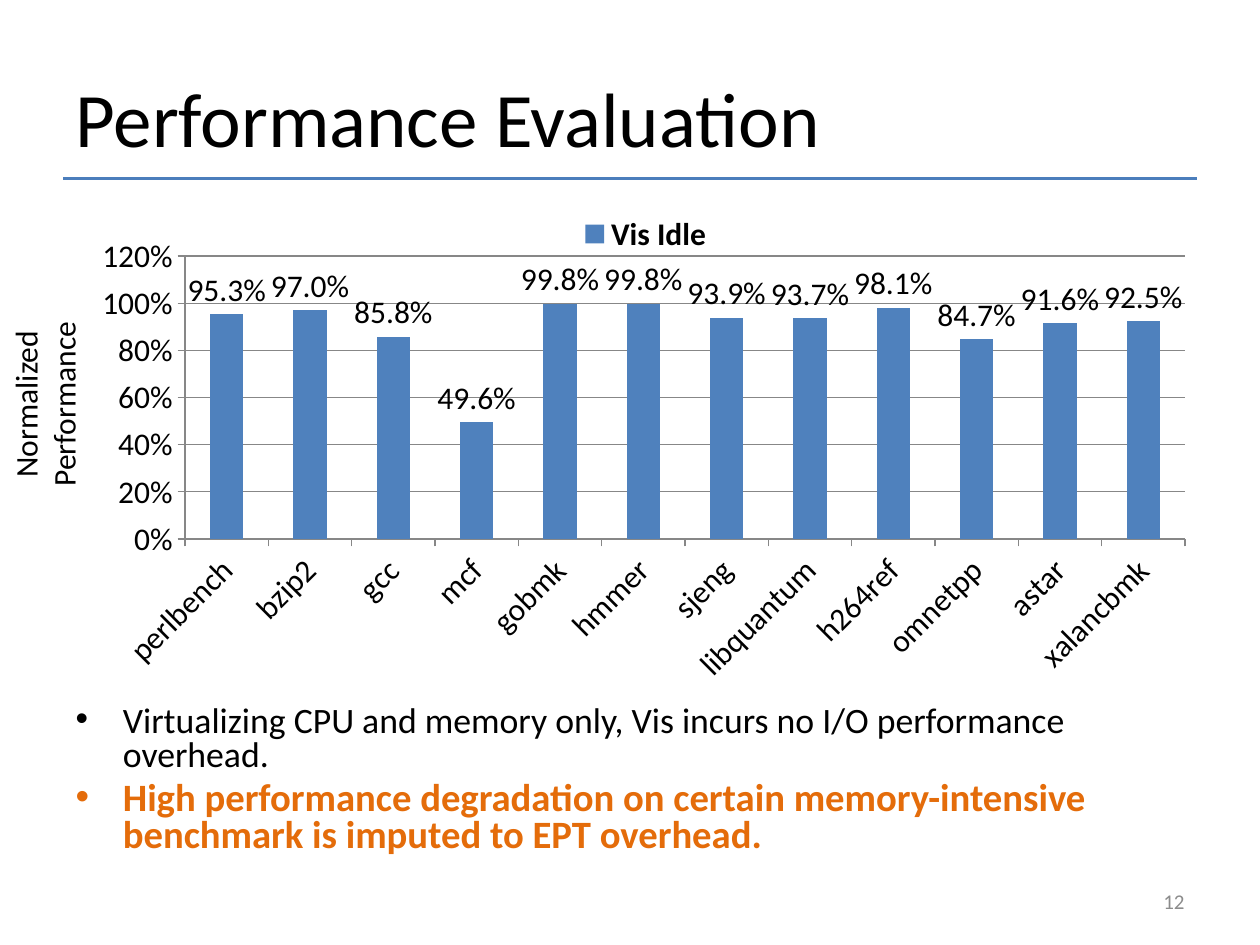
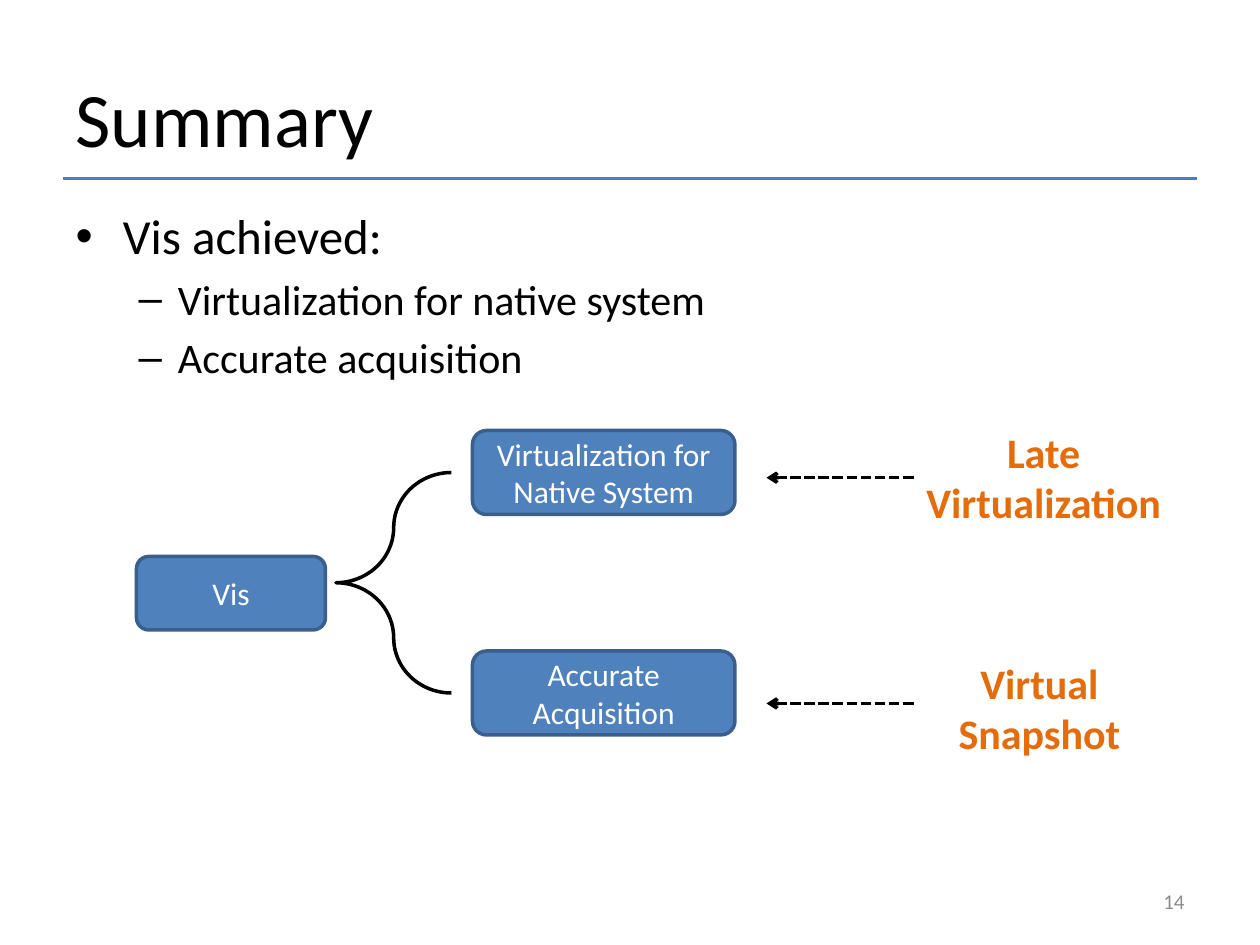
from lxml.etree import SubElement
from pptx import Presentation
from pptx.chart.data import CategoryChartData
from pptx.dml.color import RGBColor
from pptx.enum.chart import XL_CHART_TYPE as ChartType
from pptx.enum.chart import XL_LABEL_POSITION as LabelPos
from pptx.enum.chart import XL_LEGEND_POSITION as LegendPos
from pptx.enum.chart import XL_TICK_MARK as Tick
from pptx.enum.dml import MSO_LINE as Dash
from pptx.enum.shapes import MSO_CONNECTOR as Connector
from pptx.enum.shapes import MSO_SHAPE as Shape
from pptx.enum.text import MSO_ANCHOR as Anchor
from pptx.enum.text import MSO_AUTO_SIZE as AutoSize
from pptx.enum.text import PP_ALIGN as Align
from pptx.oxml.ns import qn
from pptx.util import Inches, Pt

COLORS = {"text": "000000", "accent": "E46C0A", "fill": "4F81BD",
          "edge": "3A5F8C", "rule": "4B7EBC", "number": "8C8C8C",
          "grid": "878787", "light": "FFFFFF"}
FONT = "Calibri"
COLUMNS, ROWS = 120, 90


def rgb(name):
    return RGBColor.from_string(COLORS[name])


def apply(target, formats):
    for name, value in formats.items():
        setattr(target, name, value)


def set_font(font, size, color="text", bold=False):
    apply(font, {"name": FONT, "size": Pt(size), "bold": bold})
    font.color.rgb = rgb(color)


def set_line(line, color, width=2):
    line.color.rgb = rgb(color)
    line.width = Pt(width)


class Deck:
    """Holds the shared style and the current slide; lengths are grid cells."""

    def __init__(self):
        self.prs = Presentation()
        apply(self.prs, {"slide_width": Inches(10), "slide_height": Inches(7.5)})
        self.cell_w = self.prs.slide_width / COLUMNS
        self.cell_h = self.prs.slide_height / ROWS
        self.slide = None

    def box(self, left, top, width, height):
        return (round(left * self.cell_w), round(top * self.cell_h),
                round(width * self.cell_w), round(height * self.cell_h))

    def place(self, shape, at):
        apply(shape, dict(zip(("left", "top", "width", "height"), self.box(*at))))

    def new_slide(self, heading, number):
        self.slide = self.prs.slides.add_slide(self.prs.slide_layouts[1])
        self.line((6, 17), (114, 17), "rule")
        title = self.slide.shapes.title
        self.place(title, (6, 3.6, 108, 15))
        self.set_text(title, [heading], 44, align=Align.LEFT, anchor=Anchor.MIDDLE)
        self.label((86, 83.4, 28, 4.8), [number], 12, "number",
                   align=Align.RIGHT, anchor=Anchor.MIDDLE, wrap=True)

    def set_text(self, shape, lines, size, color="text", bold=False,
                 align=Align.CENTER, anchor=Anchor.TOP, wrap=True):
        frame = shape.text_frame
        frame.text = "\n".join(lines)
        apply(frame, {"word_wrap": wrap, "auto_size": AutoSize.NONE,
                      "vertical_anchor": anchor})
        for paragraph in frame.paragraphs:
            paragraph.alignment = align
            set_font(paragraph.font, size, color, bold)

    def label(self, at, lines, size, color="text", bold=False, wrap=False,
              vertical=None, **layout):
        label = self.slide.shapes.add_textbox(*self.box(*at))
        self.set_text(label, lines, size, color, bold, wrap=wrap, **layout)
        if vertical:
            label.text_frame._txBody.bodyPr.set("vert", vertical)

    def bullets(self, at, items, spacing=1.0):
        """Each item is (text, level, font formats)."""
        body = self.slide.placeholders[1]
        self.place(body, at)
        frame = body.text_frame
        frame.text = "\n".join(text for text, _, _ in items)
        frame.auto_size = AutoSize.NONE
        frame.paragraphs[0].space_before = Pt(0)
        for paragraph, (_, level, formats) in zip(frame.paragraphs, items):
            apply(paragraph, {"level": level, "line_spacing": spacing})
            set_font(paragraph.font, **formats)

    def node(self, at, text):
        node = self.slide.shapes.add_shape(Shape.ROUNDED_RECTANGLE, *self.box(*at))
        node.shadow.inherit = False
        node.fill.solid()
        node.fill.fore_color.rgb = rgb("fill")
        set_line(node.line, "edge")
        self.set_text(node, [text], 18, "light", anchor=Anchor.MIDDLE)

    def brace(self, at, curl, middle):
        brace = self.slide.shapes.add_shape(Shape.LEFT_BRACE, *self.box(*at))
        brace.shadow.inherit = False
        brace.fill.background()
        set_line(brace.line, "text")
        brace.adjustments[0], brace.adjustments[1] = curl, middle

    def line(self, start, end, color, arrow=False):
        line = self.slide.shapes.add_connector(
            Connector.STRAIGHT, *self.box(*start, *end))
        set_line(line.line, color)
        properties = line._element.spPr
        if arrow:
            line.line.dash_style = Dash.SQUARE_DOT
            SubElement(properties.find(qn("a:ln")), qn("a:tailEnd"), type="arrow")
        SubElement(properties, qn("a:effectLst"))

    def column_chart(self, at, series_name, values, plot_area):
        data = CategoryChartData(number_format="0.0%")
        data.categories = list(values)
        data.add_series(series_name, list(values.values()))
        chart = self.slide.shapes.add_chart(
            ChartType.COLUMN_CLUSTERED, *self.box(*at), data).chart
        apply(chart, {"has_title": False, "has_legend": True})
        set_font(chart.font, 18)
        apply(chart.legend, {"position": LegendPos.TOP, "include_in_layout": False})
        set_font(chart.legend.font, 18, bold=True)

        # Columns and their labels
        plot = chart.plots[0]
        apply(plot, {"vary_by_categories": False, "gap_width": 150,
                     "has_data_labels": True})
        apply(plot.data_labels, {"show_value": True, "number_format": "0.0%",
                                 "number_format_is_linked": False,
                                 "position": LabelPos.OUTSIDE_END})
        set_font(plot.data_labels.font, 18)
        columns = plot.series[0].format.fill
        columns.solid()
        columns.fore_color.rgb = rgb("fill")

        # Axes
        scale, names = chart.value_axis, chart.category_axis
        apply(scale, {"minimum_scale": 0, "maximum_scale": 1.2, "major_unit": 0.2,
                      "has_major_gridlines": True})
        apply(scale.tick_labels, {"number_format": "0%",
                                  "number_format_is_linked": False})
        set_line(scale.major_gridlines.format.line, "grid", 0.75)
        for axis in (scale, names):
            axis.major_tick_mark = Tick.OUTSIDE
            set_font(axis.tick_labels.font, 18)
            set_line(axis.format.line, "grid", 0.75)
        names._element.find(qn("c:txPr")).find(qn("a:bodyPr")).set("rot", "-2700000")
        self.set_plot_area(chart, plot_area)

    @staticmethod
    def set_plot_area(chart, shares):
        area = chart._chartSpace.chart.plotArea
        for former in area.findall(qn("c:layout")):
            area.remove(former)
        layout = SubElement(area, qn("c:layout"))
        area.insert(0, layout)
        manual = SubElement(layout, qn("c:manualLayout"))
        settings = {"layoutTarget": "inner", "xMode": "edge", "yMode": "edge",
                    **dict(zip("xywh", shares))}
        for tag, value in settings.items():
            SubElement(manual, qn(f"c:{tag}"), val=str(value))


def performance_slide(deck):
    deck.new_slide("Performance Evaluation", "12")
    deck.bullets((6, 66.6, 108, 16.4), [
        ("Virtualizing CPU and memory only, Vis incurs no I/O performance overhead.",
         0, {"size": 20.4}),
        ("High performance degradation on certain memory-intensive benchmark "
         "is imputed to EPT overhead.",
         0, {"size": 22.1, "color": "accent", "bold": True}),
    ], spacing=0.8)
    benchmarks = {
        "perlbench": 0.953, "bzip2": 0.97, "gcc": 0.858, "mcf": 0.496,
        "gobmk": 0.998, "hmmer": 0.998, "sjeng": 0.939, "libquantum": 0.937,
        "h264ref": 0.981, "omnetpp": 0.847, "astar": 0.916, "xalancbmk": 0.925}
    deck.column_chart((8, 19, 107, 49), "Vis Idle", benchmarks,
                      (0.09, 0.11, 0.89, 0.55))
    deck.label((0, 30, 9.7, 17), ["Normalized", "Performance"], 18,
               vertical="vert270")


def summary_slide(deck):
    deck.new_slide("Summary", "14")
    deck.bullets((6, 19, 108, 21), [
        ("Vis achieved:", 0, {"size": 28}),
        ("Virtualization for native system", 1, {"size": 24}),
        ("Accurate acquisition", 1, {"size": 24}),
    ])

    # Vis and its two goals
    deck.node((13, 53, 18, 7), "Vis")
    deck.brace((32, 45, 11, 21), 0.54, 0.5)
    deck.node((45, 41, 25, 8), "Virtualization for Native System")
    deck.node((45, 62, 25, 8), "Accurate Acquisition")

    # Technique behind each goal
    techniques = [((86.9, 40, 25, 10.9), ["Late", "Virtualization"], 45.5),
                  ((90, 62, 18, 10.9), ["Virtual", "Snapshot"], 67)]
    for at, lines, arrow_row in techniques:
        deck.label(at, lines, 24, "accent", bold=True)
        deck.line((87, arrow_row), (73, arrow_row), "text", arrow=True)


def main():
    deck = Deck()
    performance_slide(deck)
    summary_slide(deck)
    deck.prs.save("out.pptx")


if __name__ == "__main__":
    main()
